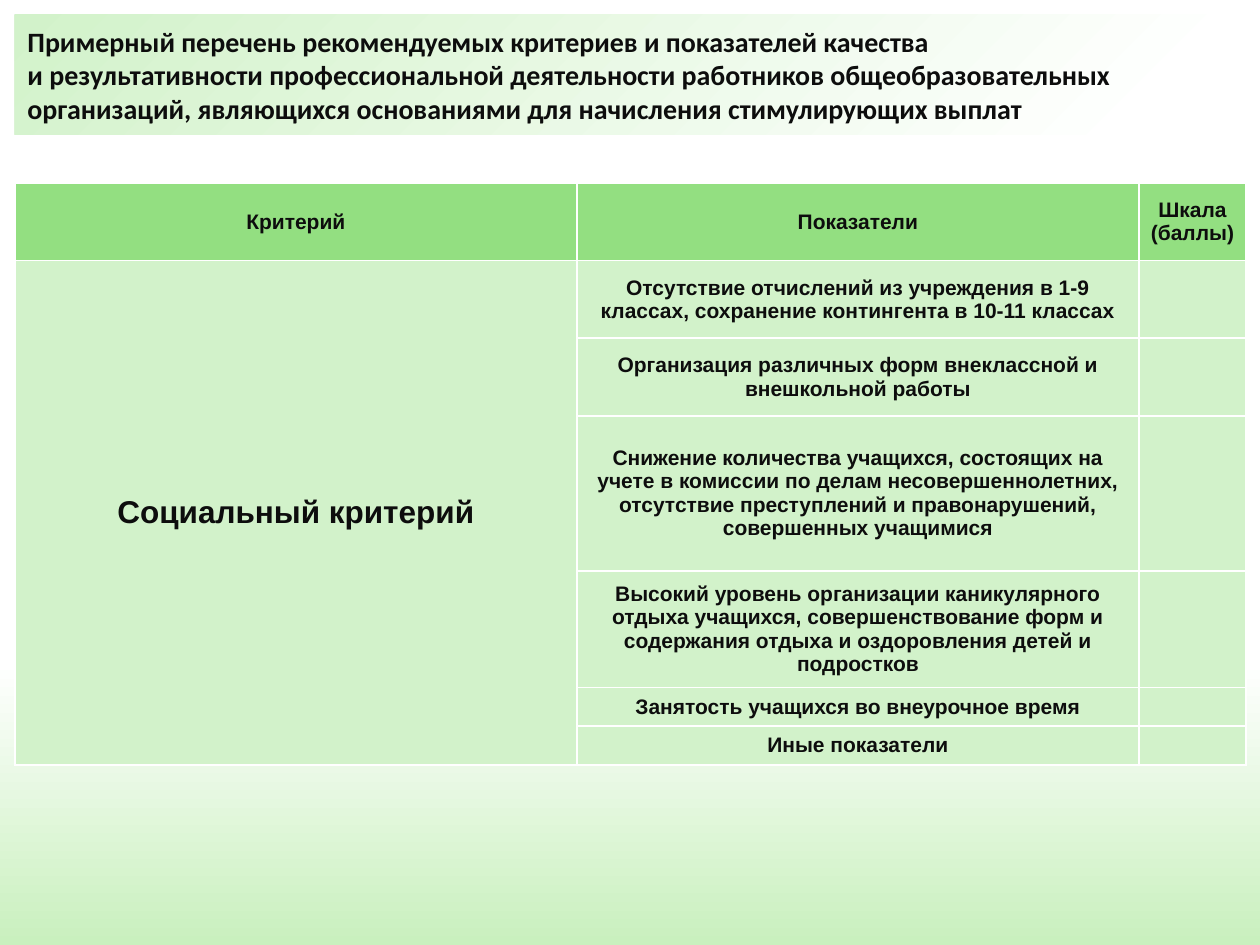
from dataclasses import dataclass

from lxml.etree import SubElement
from pptx import Presentation
from pptx.dml.color import RGBColor as RGB
from pptx.enum.text import MSO_ANCHOR as Anchor, MSO_AUTO_SIZE as AutoSize, PP_ALIGN as Align
from pptx.oxml import parse_xml
from pptx.oxml.ns import nsdecls, qn
from pptx.slide import Slide
from pptx.table import _Cell as Cell
from pptx.text.text import TextFrame
from pptx.util import Cm, Pt


@dataclass(frozen=True)
class Theme:
    ink: str = "0D0D0D"
    white: str = "FFFFFF"
    header: str = "93DF81"
    body: str = "D2F2CA"
    backdrop: str = "C9F0BE"
    title_font: str = "Calibri"
    table_font: str = "Arial"
    title_size: int = 16
    criterion_size: int = 18
    cell_size: int = 12
    border: int = 1


@dataclass(frozen=True)
class Indicator:
    text: str
    units: int


THEME = Theme()
LEFT = 0.3
ROW_UNIT = 0.782
HEADER_UNITS = 2
COLUMNS = (11.33, 11.33, 2.16)
HEADINGS = ("Критерий", "Показатели", "Шкала (баллы)")
CRITERION = "Социальный критерий"
TITLE = (
    "Примерный перечень рекомендуемых критериев и показателей качества\v"
    "и результативности профессиональной деятельности работников общеобразовательных "
    "организаций, являющихся основаниями для начисления стимулирующих выплат"
)
INDICATORS = (
    Indicator("Отсутствие отчислений из учреждения в 1-9 классах, "
              "сохранение контингента в 10-11 классах", 2),
    Indicator("Организация различных форм внеклассной и внешкольной работы", 2),
    Indicator("Снижение количества учащихся, состоящих на учете в комиссии по делам "
              "несовершеннолетних, отсутствие преступлений и правонарушений, "
              "совершенных учащимися", 4),
    Indicator("Высокий уровень организации каникулярного отдыха учащихся, совершенствование "
              "форм и содержания отдыха и оздоровления детей и подростков", 3),
    Indicator("Занятость учащихся во внеурочное время", 1),
    Indicator("Иные показатели", 1),
)


def set_gradient(owner, fill, stops: dict[int, str], direction: str) -> None:
    fill.gradient()
    old = owner.find(".//" + qn("a:gradFill"))
    marks = "".join(
        f'<a:gs pos="{pos * 1000}"><a:srgbClr val="{color}"/></a:gs>'
        for pos, color in stops.items()
    )
    new = parse_xml(
        f'<a:gradFill {nsdecls("a")} rotWithShape="1">'
        f"<a:gsLst>{marks}</a:gsLst>{direction}</a:gradFill>"
    )
    old.getparent().replace(old, new)


def format_text(tf: TextFrame, font: str, size: int, align: Align) -> None:
    for p in tf.paragraphs:
        p.alignment = align
        for r in p.runs:
            r.font.name = font
            r.font.size = Pt(size)
            r.font.bold = True
            r.font.color.rgb = RGB.from_string(THEME.ink)


def add_borders(cell: Cell) -> None:
    props = cell._tc.get_or_add_tcPr()
    for side in ("a:lnL", "a:lnR", "a:lnT", "a:lnB"):
        ln = SubElement(props, qn(side), w=str(Pt(THEME.border)))
        fill = SubElement(ln, qn("a:solidFill"))
        SubElement(fill, qn("a:srgbClr"), val=THEME.white)


def format_cell(cell: Cell, text: str, fill: str, size: int) -> None:
    add_borders(cell)
    cell.fill.solid()
    cell.fill.fore_color.rgb = RGB.from_string(fill)
    cell.margin_left = cell.margin_right = Cm(0.18)
    cell.margin_top = cell.margin_bottom = 0
    cell.vertical_anchor = Anchor.MIDDLE
    cell.text_frame.text = text
    format_text(cell.text_frame, THEME.table_font, size, Align.CENTER)


def add_title(s: Slide) -> None:
    sp = s.shapes.title
    sp.left, sp.top, sp.width, sp.height = Cm(LEFT), Cm(0.3), Cm(24.4), Cm(2.41)
    set_gradient(
        sp._element, sp.fill, {0: THEME.body, 93: THEME.white, 100: THEME.white},
        '<a:path path="circle"><a:fillToRect r="100000" b="100000"/></a:path>',
    )
    tf = sp.text_frame
    tf.text = TITLE
    tf.word_wrap = True
    tf.auto_size = AutoSize.NONE
    tf.vertical_anchor = Anchor.MIDDLE
    format_text(tf, THEME.title_font, THEME.title_size, Align.LEFT)


def add_criteria_table(s: Slide) -> None:
    units = [HEADER_UNITS] + [item.units for item in INDICATORS]
    table = s.shapes.add_table(
        len(units), len(COLUMNS), Cm(LEFT), Cm(3.69),
        Cm(sum(COLUMNS)), Cm(sum(units) * ROW_UNIT),
    ).table
    for column, width in zip(table.columns, COLUMNS):
        column.width = Cm(width)
    for row, count in zip(table.rows, units):
        row.height = Cm(count * ROW_UNIT)
    for col, heading in enumerate(HEADINGS):
        format_cell(table.cell(0, col), heading, THEME.header, THEME.cell_size)
    for row, item in enumerate(INDICATORS, 1):
        texts = (CRITERION if row == 1 else "", item.text, "")
        for col, text in enumerate(texts):
            size = THEME.cell_size if col else THEME.criterion_size
            format_cell(table.cell(row, col), text, THEME.body, size)
    table.cell(1, 0).merge(table.cell(len(INDICATORS), 0))


def main() -> None:
    prs = Presentation()
    prs.slide_width, prs.slide_height = Cm(25.4), Cm(19.05)
    s = prs.slides.add_slide(prs.slide_layouts[5])
    set_gradient(
        s._element, s.background.fill,
        {0: THEME.backdrop, 30: THEME.white, 70: THEME.white},
        '<a:lin ang="16200000" scaled="0"/>',
    )
    add_title(s)
    add_criteria_table(s)
    prs.save("out.pptx")


if __name__ == "__main__":
    main()
